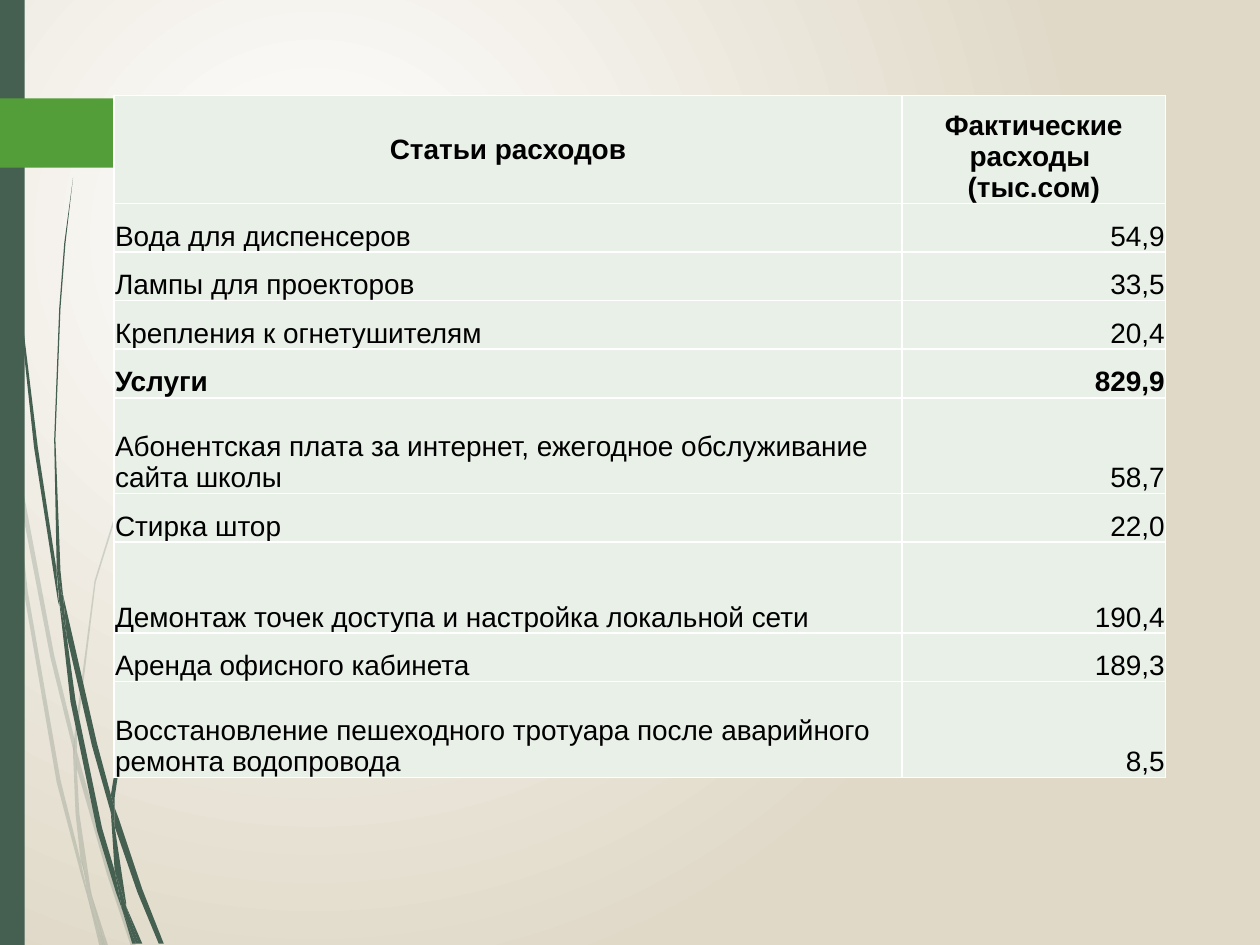
from lxml.etree import SubElement
from pptx import Presentation
from pptx.dml.color import RGBColor
from pptx.enum.shapes import MSO_SHAPE
from pptx.enum.text import MSO_ANCHOR, PP_ALIGN
from pptx.oxml import parse_xml
from pptx.oxml.ns import nsdecls, qn
from pptx.util import Cm, Pt

WHITE = RGBColor(0xFF, 0xFF, 0xFF)
BLACK = RGBColor(0, 0, 0)
SAND = RGBColor(0xE0, 0xD9, 0xC8)
PINE = RGBColor(0x45, 0x5F, 0x51)
GREEN = RGBColor(0x54, 0x9E, 0x39)
MINT = RGBColor(0xE9, 0xF0, 0xE8)

OUTLINE_UNIT = Cm(0.0254)

PALE_BLADES = [
    [(8, 350), (6, 322), (0, 282), (0, 299), (7, 344)],
    [(40, 522), (59, 599), (59, 586), (43, 520), (10, 345), (12, 376)],
    [(64, 607), (61, 596), (61, 610), (85, 694), (104, 751), (108, 751), (88, 692)],
    [(83, 751), (86, 751), (73, 711)],
    [(64, 683), (48, 619), (22, 469), (12, 376), (8, 350), (19, 470), (45, 621),
     (64, 693), (70, 714), (69, 707)],
    [(58, 599), (60, 646), (64, 683), (67, 692), (73, 711), (72, 706), (63, 646),
     (61, 610), (61, 608)],
    [(61, 584), (76, 462), (111, 349), (159, 245), (187, 198), (201, 175), (217, 154),
     (217, 153), (201, 175), (186, 197), (158, 244), (110, 348), (75, 461), (59, 584),
     (59, 586), (61, 596)],
    [(70, 714), (79, 751), (82, 751)],
    [(61, 608), (61, 610), (61, 596), (59, 586), (58, 599)],
    [(67, 692), (65, 683), (69, 707), (70, 714), (82, 751), (83, 751), (73, 711)],
]

DARK_BLADES = [
    [(5, 110), (14, 233), (27, 355), (46, 477), (47, 481), (45, 457), (45, 453),
     (30, 355), (15, 232), (6, 109), (4, 48), (3, 0), (2, 0), (3, 48)],
    [(73, 592), (88, 645), (88, 633), (88, 631), (77, 590), (50, 472), (53, 505)],
    [(94, 649), (91, 641), (91, 656), (109, 708), (126, 749), (130, 749), (113, 706)],
    [(91, 691), (81, 657), (60, 556), (53, 505), (47, 477), (56, 557), (77, 659),
     (92, 708), (97, 722), (96, 717)],
    [(50, 472), (48, 453), (44, 349), (48, 245), (52, 193), (58, 141), (51, 193),
     (47, 245), (43, 349), (45, 449), (49, 472)],
    [(110, 749), (113, 749), (100, 719)],
    [(47, 477), (53, 505), (50, 472), (49, 472), (45, 449), (45, 453)],
    [(91, 633), (103, 552), (131, 476), (169, 406), (191, 374), (203, 359), (216, 344),
     (215, 344), (203, 358), (191, 373), (168, 405), (129, 474), (101, 551), (88, 631),
     (91, 641)],
    [(97, 722), (105, 749), (108, 749)],
    [(88, 645), (91, 691), (96, 706), (100, 719), (100, 716), (91, 656), (90, 651)],
    [(88, 645), (90, 651), (91, 656), (91, 641), (88, 631), (88, 633)],
    [(96, 706), (91, 691), (96, 717), (97, 722), (108, 749), (110, 749), (100, 719)],
]

ARROW_TAG = [(149, 107), (124, 132), (121, 133), (0, 133), (0, 78), (121, 78),
             (124, 79), (149, 104)]

SINGLE_ROW, WIDE_ROW = Cm(0.98), Cm(1.93)
EXPENSES = [
    ("Статьи расходов", "Фактические расходы  (тыс.сом)", Cm(2.17)),
    ("Вода для диспенсеров", "54,9", SINGLE_ROW),
    ("Лампы для проекторов", "33,5", SINGLE_ROW),
    ("Крепления к огнетушителям", "20,4", SINGLE_ROW),
    ("Услуги", "829,9", SINGLE_ROW),
    ("Абонентская плата за интернет, ежегодное обслуживание сайта школы", "58,7", WIDE_ROW),
    ("Стирка штор", "22,0", SINGLE_ROW),
    ("Демонтаж точек доступа и настройка локальной сети", "190,4", Cm(1.83)),
    ("Аренда офисного кабинета", "189,3", SINGLE_ROW),
    ("Восстановление пешеходного тротуара после аварийного ремонта водопровода", "8,5",
     WIDE_ROW),
]
BOLD_ROWS = (0, 4)


def write_text(text_frame, text, font="Arial", size=16, bold=False, color=BLACK,
               align=PP_ALIGN.LEFT):
    """Write one formatted paragraph into a text frame."""
    paragraph = text_frame.paragraphs[0]
    paragraph.alignment = align
    run = paragraph.add_run()
    run.text = text
    run.font.name = font
    run.font.size = Pt(size)
    run.font.bold = bold
    run.font.color.rgb = color


class SlideBuilder:
    """Hold the style and the current slide, and add elements to it."""

    def __init__(self, slide, border_color=WHITE, border_width=Pt(1), cell_fill=MINT):
        self.slide = slide
        self.border_color = border_color
        self.border_width = border_width
        self.cell_fill = cell_fill

    def background(self, inner, outer):
        """Fill the background with a round gradient."""
        fill = self.slide.background.fill
        fill.gradient()
        for stop, color in zip(fill.gradient_stops, (inner, outer)):
            stop.color.rgb = color
        linear = self.slide.element.find(".//" + qn("a:lin"))
        linear.getparent().replace(linear, parse_xml(
            f'<a:path {nsdecls("a")} path="circle">'
            '<a:fillToRect l="50000" t="50000" r="100000" b="100000"/></a:path>'))

    def paint(self, shape, color, opacity=100):
        """Give a shape a plain fill without line or shadow."""
        shape.shadow.inherit = False
        shape.fill.solid()
        shape.fill.fore_color.rgb = color
        shape.line.fill.background()
        if opacity < 100:
            color_element = shape.element.spPr.find(".//" + qn("a:srgbClr"))
            SubElement(color_element, qn("a:alpha"), val=str(opacity * 1000))

    def outline(self, shapes, points, color, opacity=100):
        """Add a closed outline."""
        builder = shapes.build_freeform(*points[0], scale=OUTLINE_UNIT)
        builder.add_line_segments(points[1:], close=True)
        self.paint(builder.convert_to_shape(), color, opacity)

    def blades(self, outlines, color, opacity=100):
        """Add a group of grass blades."""
        group = self.slide.shapes.add_group_shape()
        for points in outlines:
            self.outline(group.shapes, points, color, opacity)

    def bar(self, left, top, width, height, color):
        """Add a plain rectangle."""
        shape = self.slide.shapes.add_shape(MSO_SHAPE.RECTANGLE, left, top, width, height)
        self.paint(shape, color)

    def cell(self, cell, text, anchor, **text_format):
        """Fill, border and write one table cell."""
        cell.margin_left = cell.margin_right = cell.margin_top = Cm(0.02)
        cell.margin_bottom = 0
        cell.vertical_anchor = anchor
        cell.fill.solid()
        cell.fill.fore_color.rgb = self.cell_fill
        properties = cell._tc.get_or_add_tcPr()
        for position, side in enumerate(("lnL", "lnR", "lnT", "lnB")):
            properties.insert(position, parse_xml(
                f'<a:{side} {nsdecls("a")} w="{self.border_width}"><a:solidFill>'
                f'<a:srgbClr val="{self.border_color}"/></a:solidFill></a:{side}>'))
        write_text(cell.text_frame, text, **text_format)

    def expense_table(self, rows, left, top, widths):
        """Add the table of expense items and amounts."""
        height = sum(row[-1] for row in rows)
        table = self.slide.shapes.add_table(
            len(rows), len(widths), left, top, sum(widths), height).table
        table.horz_banding = False
        for column, width in zip(table.columns, widths):
            column.width = width
        for index, (item, amount, row_height) in enumerate(rows):
            table.rows[index].height = row_height
            is_header = index == 0
            for column, text in enumerate((item, amount)):
                side = PP_ALIGN.RIGHT if column else PP_ALIGN.LEFT
                is_middle = is_header and column == 0
                self.cell(table.cell(index, column), text,
                          MSO_ANCHOR.MIDDLE if is_middle else MSO_ANCHOR.BOTTOM,
                          bold=index in BOLD_ROWS,
                          align=PP_ALIGN.CENTER if is_header else side)


def main():
    """Build the expenses slide and save it."""
    presentation = Presentation()
    presentation.slide_width = Cm(25.4)
    presentation.slide_height = Cm(19.05)
    slide = presentation.slides.add_slide(presentation.slide_layouts[6])
    builder = SlideBuilder(slide)
    builder.background(WHITE, SAND)
    builder.blades(PALE_BLADES, PINE, opacity=20)
    builder.blades(DARK_BLADES, PINE)
    builder.bar(0, 0, Cm(0.5), presentation.slide_height, PINE)
    builder.outline(slide.shapes, ARROW_TAG, GREEN)
    builder.expense_table(EXPENSES, Cm(2.3), Cm(1.93), (Cm(15.88), Cm(5.32)))
    presentation.save("out.pptx")


if __name__ == "__main__":
    main()
